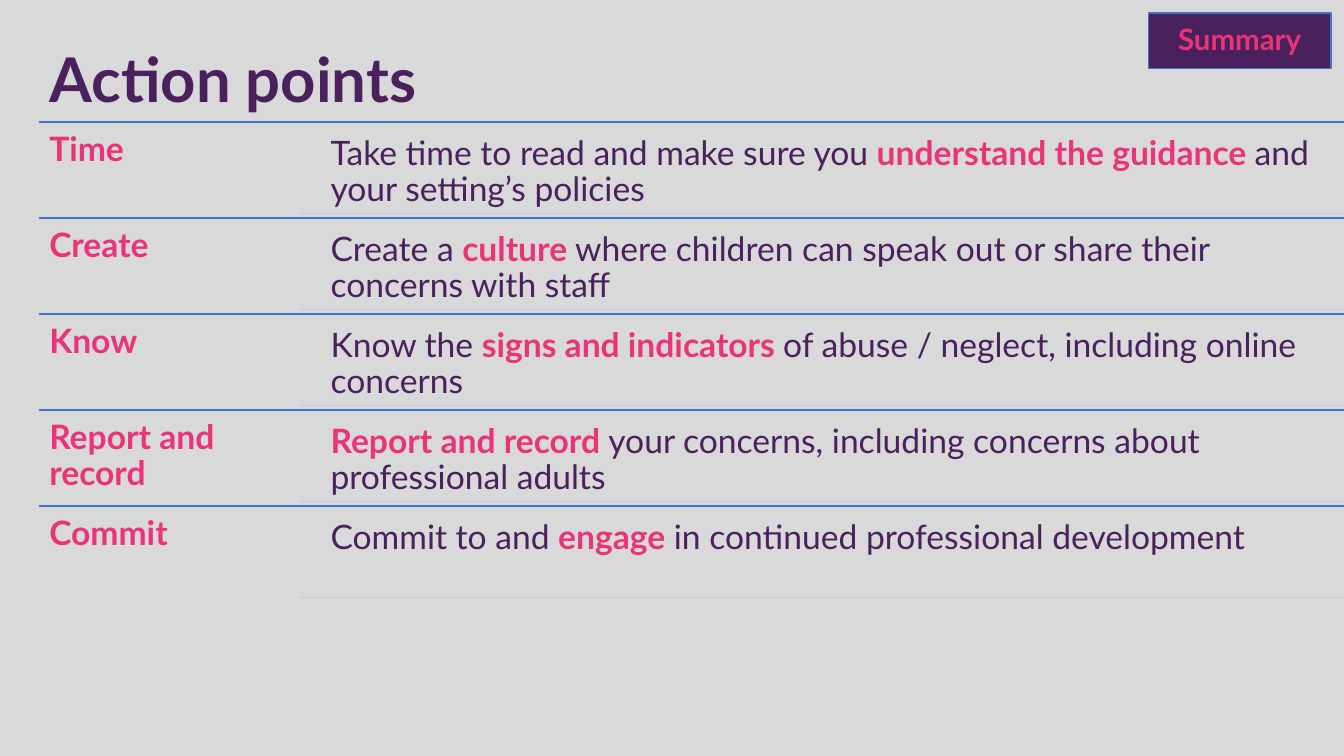
from pptx import Presentation
from pptx.dml.color import RGBColor
from pptx.enum.shapes import MSO_CONNECTOR, MSO_SHAPE
from pptx.enum.text import MSO_ANCHOR, MSO_AUTO_SIZE, PP_ALIGN
from pptx.oxml.ns import qn
from pptx.util import Inches, Pt
from lxml.etree import SubElement

PURPLE, PINK, BLUE, PALE = "4A205D", "EB3377", "4472C4", "C1C9E4"
WIDTH, HEIGHT = 13.33, 7.5
LEFT, TOP, ROW_H = 0.39, 1.21, 0.9525
LABEL_W, GUTTER, PAD = 2.59, 0.2, 0.045

# Heading of each row, then its sentence as runs; * marks the highlighted run
ROWS = [
    ("Time", ["Take time to read and make sure you ", "*understand the guidance ",
              "and your setting’s policies\u00a0"]),
    ("Create", ["Create a ", "*culture",
                " where children can speak out or share their concerns with staff"]),
    ("Know", ["Know the ", "*signs and indicators ",
              "of abuse / neglect, including online concerns"]),
    ("Report and record", ["*Report and record ",
                           "your concerns, including concerns about professional adults"]),
    ("Commit", ["Commit to and ", "*engage", " in continued professional development"]),
]


def rgb(hex_colour):
    return RGBColor.from_string(hex_colour)


def write(tf, runs, size, inset):
    tf.word_wrap = True
    tf.auto_size = MSO_AUTO_SIZE.NONE
    tf.margin_left = tf.margin_right = tf.margin_top = tf.margin_bottom = Inches(inset)
    p = tf.paragraphs[0]
    p.line_spacing = 0.9
    p.font.name, p.font.size = "Lato", Pt(size)
    for text in runs:
        r = p.add_run()
        r.text = text.lstrip("*")
        r.font.bold = text.startswith("*")
        r.font.color.rgb = rgb(PINK if r.font.bold else PURPLE)
    return p


prs = Presentation()
prs.slide_width, prs.slide_height = Inches(WIDTH), Inches(HEIGHT)
s = prs.slides.add_slide(prs.slide_layouts[5])
s.background.fill.solid()
s.background.fill.fore_color.rgb = rgb("D9D9D9")

# Title
title = s.shapes.title
title.left, title.top, title.width, title.height = map(Inches, (LEFT, 0.39, 11.5, 0.85))
tf = title.text_frame
tf.vertical_anchor = MSO_ANCHOR.MIDDLE
p = write(tf, ["Action points"], 44, 0.1)
p.alignment = PP_ALIGN.LEFT
p.runs[0].font.bold = True

# Action rows: rule above, heading, sentence, pale rule below the sentence
text_left = LEFT + LABEL_W + GUTTER
for i, (heading, sentence) in enumerate(ROWS):
    y = TOP + i * ROW_H
    text_h = ROW_H - 2 * PAD
    for x, line_y, colour in [(LEFT, y, BLUE),
                              (LEFT + LABEL_W, y + PAD + text_h, PALE)]:
        line = s.shapes.add_connector(MSO_CONNECTOR.STRAIGHT, Inches(x), Inches(line_y),
                                      Inches(WIDTH), Inches(line_y))
        line.line.color.rgb = rgb(colour)
        line.line.width = Pt(1)
        SubElement(line._element.spPr, qn("a:effectLst"))
    for x, box_y, w, h, runs in [
            (LEFT, y, LABEL_W, ROW_H, ["*" + heading]),
            (text_left, y + PAD, WIDTH - text_left, text_h, sentence)]:
        box = s.shapes.add_textbox(Inches(x), Inches(box_y), Inches(w), Inches(h))
        write(box.text_frame, runs, 24, 0.1)

# Summary badge
badge = s.shapes.add_shape(MSO_SHAPE.RECTANGLE, Inches(11.39), Inches(0.13),
                           Inches(1.81), Inches(0.55))
badge.shadow.inherit = False
badge.fill.solid()
badge.fill.fore_color.rgb = rgb(PURPLE)
badge.line.color.rgb = rgb(BLUE)
badge.line.width = Pt(1)
badge.text_frame.vertical_anchor = MSO_ANCHOR.MIDDLE
write(badge.text_frame, ["*Summary"], 21, 0.19).alignment = PP_ALIGN.CENTER

prs.save("out.pptx")
